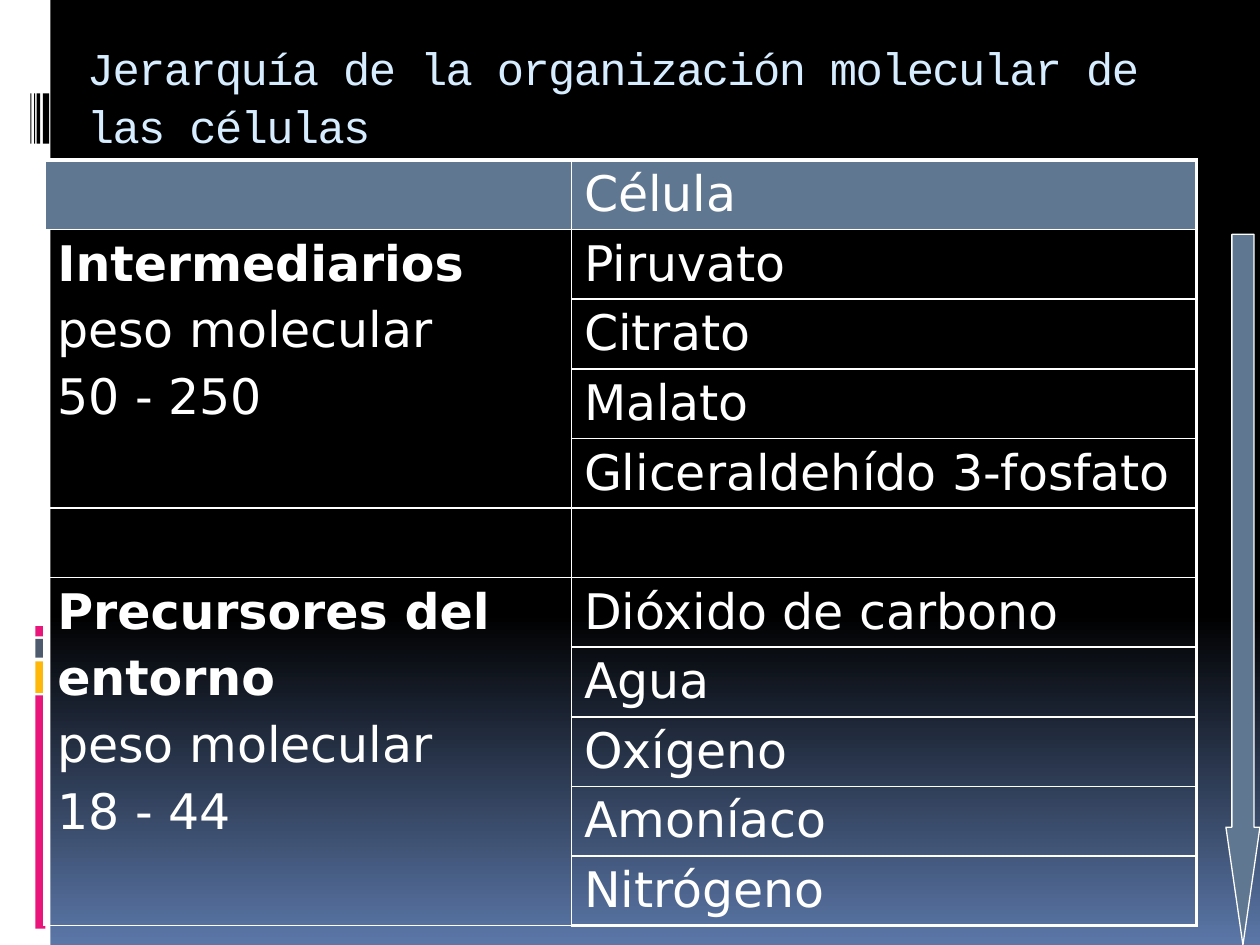
from dataclasses import dataclass

import lxml.etree
import pptx
import pptx.dml.color
import pptx.enum.shapes
import pptx.enum.text
import pptx.oxml.ns
import pptx.util


@dataclass(frozen=True)
class Theme:
    night: str = "000000"
    dusk: str = "5B77A8"
    white: str = "FFFFFF"
    steel: str = "5F7791"
    pink: str = "EA157A"
    amber: str = "FEB80A"
    slate: str = "4E5B6F"
    heading: str = "D6ECFF"
    heading_font: str = "Courier New"
    body_font: str = "DejaVu Sans"
    heading_size: float = 26
    body_size: float = 28
    outer_line: float = 2.25
    inner_line: float = 1
    arrow_line: float = 0.75


@dataclass(frozen=True)
class Bar:
    left: float
    top: float
    width: float
    height: float
    color: str


@dataclass(frozen=True)
class Level:
    name: list[str]
    weight: list[str]
    molecules: list[str]


THEME = Theme()
WIDTH, HEIGHT = pptx.util.Inches(10), pptx.util.Inches(7.5)

MARGIN_BARS = [
    Bar(0, 0, 4, 100, THEME.white),
    Bar(2.8, 73.6, 0.8, 24.67, THEME.pink),
    Bar(2.8, 70, 0.8, 3.33, THEME.amber),
    Bar(2.8, 67.6, 0.8, 2, THEME.slate),
    Bar(2.8, 66.27, 0.8, 1.07, THEME.pink),
] + [
    Bar(left, 9.87, width, 5.33, THEME.night)
    for left, width in [(3.4, 0.5), (2.9, 0.3), (2.7, 0.1), (2.4, 0.1)]
]

LEVELS = [
    Level(["Intermediarios"], ["peso molecular", "50 - 250"],
          ["Piruvato", "Citrato", "Malato", "Gliceraldehído 3-fosfato"]),
    Level([], [], [""]),
    Level(["Precursores del", "entorno"], ["peso molecular", "18 - 44"],
          ["Dióxido de carbono", "Agua", "Oxígeno", "Amoníaco", "Nitrógeno"]),
]


def rgb(color: str) -> pptx.dml.color.RGBColor:
    return pptx.dml.color.RGBColor.from_string(color)


def place(left: float, top: float, width: float, height: float) -> list[int]:
    return [int(WIDTH * left / 100), int(HEIGHT * top / 100),
            int(WIDTH * width / 100), int(HEIGHT * height / 100)]


def write(frame, text: str, *, size: float = THEME.body_size,
          font: str = THEME.body_font, color: str = THEME.white,
          bold: bool = False, tracking: float = 0, leading: float = 1.0) -> None:
    first = not frame.text
    paragraph = frame.paragraphs[0] if first else frame.add_paragraph()
    paragraph.alignment = pptx.enum.text.PP_ALIGN.LEFT
    paragraph.line_spacing = leading
    paragraph.space_before = pptx.util.Pt(0 if first else round(size * 0.2, 1))
    run = paragraph.add_run()
    run.text = text
    run.font.size = pptx.util.Pt(size)
    run.font.name = font
    run.font.bold = bold
    run.font.color.rgb = rgb(color)
    if tracking:
        run.font._element.set("spc", str(int(tracking * 100)))


def draw_shape(slide, kind, bar: Bar):
    shape = slide.shapes.add_shape(
        kind, *place(bar.left, bar.top, bar.width, bar.height))
    shape.shadow.inherit = False
    shape.fill.solid()
    shape.fill.fore_color.rgb = rgb(bar.color)
    shape.line.fill.background()
    return shape


def rule_cell(cell, widths: dict[str, float]) -> None:
    properties = cell._tc.get_or_add_tcPr()
    for side, width in widths.items():
        line = lxml.etree.SubElement(
            properties, pptx.oxml.ns.qn(f"a:{side}"), w=str(pptx.util.Pt(width)))
        fill = lxml.etree.SubElement(line, pptx.oxml.ns.qn("a:solidFill"))
        lxml.etree.SubElement(fill, pptx.oxml.ns.qn("a:srgbClr"), val=THEME.white)


def draw_background(slide) -> None:
    fill = slide.background.fill
    fill.gradient()
    fill.gradient_angle = 270
    for stop, position, color in zip(
            fill.gradient_stops, (0.65, 1), (THEME.night, THEME.dusk)):
        stop.position = position
        stop.color.rgb = rgb(color)


def draw_title(slide, text: str) -> None:
    title = slide.shapes.title
    title.left, title.top, title.width, title.height = place(5.9, 2.8, 88.2, 11.33)
    frame = title.text_frame
    frame.word_wrap = True
    frame.auto_size = pptx.enum.text.MSO_AUTO_SIZE.NONE
    frame.vertical_anchor = pptx.enum.text.MSO_ANCHOR.TOP
    frame.margin_top = pptx.util.Inches(0.08)
    write(frame, text, size=THEME.heading_size, font=THEME.heading_font,
          color=THEME.heading, tracking=-1, leading=1.06)


def draw_hierarchy(slide, heading: str, levels: list[Level]) -> None:
    last = sum(len(level.molecules) for level in levels)
    table = slide.shapes.add_table(
        last + 1, 2, *place(3.55, 16.93, 91.4, 81.03)).table
    table.first_row = table.horz_banding = False
    for column, share in zip(table.columns, (41.8, 49.6)):
        column.width = int(WIDTH * share / 100)

    outer, inner = THEME.outer_line, THEME.inner_line
    for row in range(last + 1):
        for column in range(2):
            cell = table.cell(row, column)
            rule_cell(cell, {
                "lnL": inner if column else outer,
                "lnR": outer if column else inner,
                "lnT": inner if row else outer,
                "lnB": outer if row == last else inner,
            })
            if row:
                cell.fill.background()
            else:
                cell.fill.solid()
                cell.fill.fore_color.rgb = rgb(THEME.steel)

    write(table.cell(0, 1).text_frame, heading)
    top = 1
    for level in levels:
        bottom = top + len(level.molecules) - 1
        group = table.cell(top, 0)
        if bottom > top:
            group.merge(table.cell(bottom, 0))
        for text in level.name:
            write(group.text_frame, text, bold=True)
        for text in level.weight:
            write(group.text_frame, text)
        for row, molecule in enumerate(level.molecules, top):
            if molecule:
                write(table.cell(row, 1).text_frame, molecule)
        top = bottom + 1


def main() -> None:
    deck = pptx.Presentation()
    deck.slide_width, deck.slide_height = WIDTH, HEIGHT
    slide = deck.slides.add_slide(deck.slide_layouts[5])
    shapes = pptx.enum.shapes.MSO_SHAPE

    draw_background(slide)
    for bar in MARGIN_BARS:
        draw_shape(slide, shapes.RECTANGLE, bar)
    draw_title(slide, "Jerarquía de la organización molecular de las células")
    draw_hierarchy(slide, "Célula", LEVELS)

    descent = draw_shape(slide, shapes.DOWN_ARROW,
                         Bar(97.3, 24.8, 2.7, 75.2, THEME.steel))
    descent.adjustments[0] = 0.65
    descent.adjustments[1] = 3.46
    descent.line.color.rgb = rgb(THEME.white)
    descent.line.width = pptx.util.Pt(THEME.arrow_line)

    deck.save("out.pptx")


if __name__ == "__main__":
    main()
